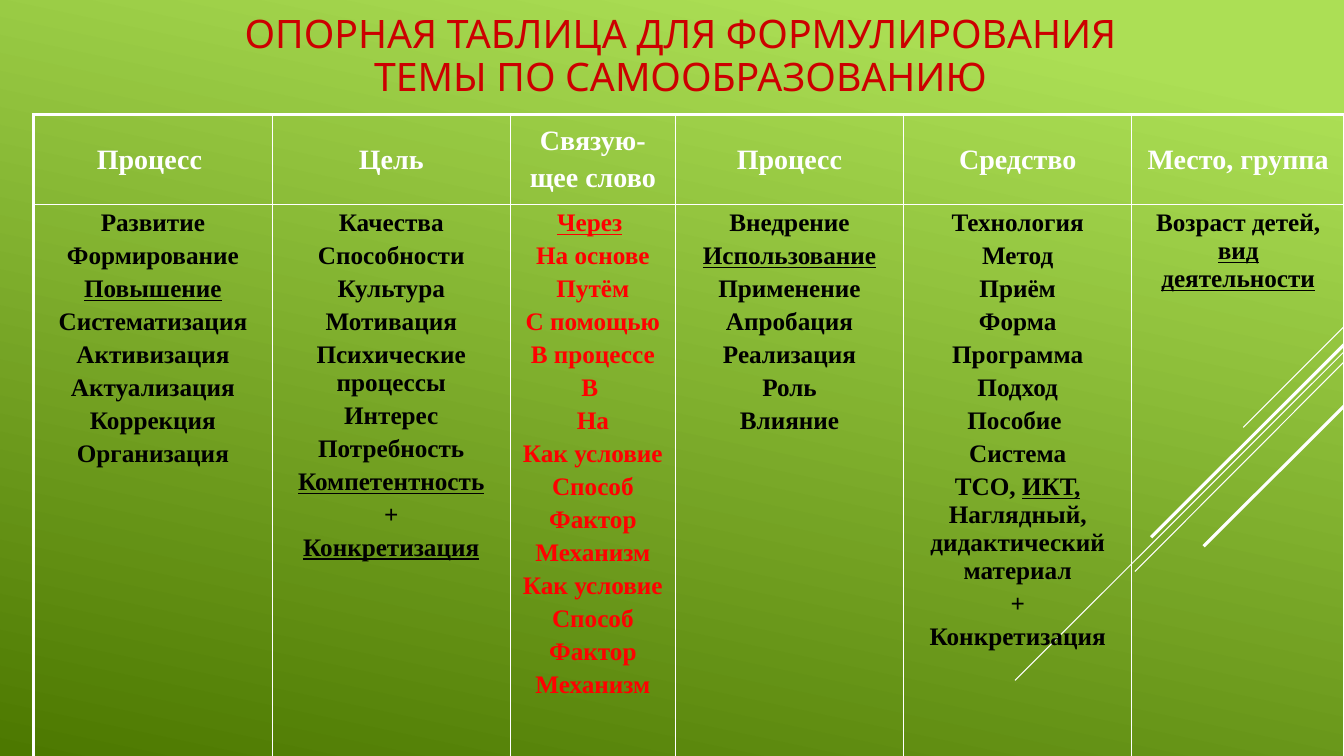
import pptx
import pptx.dml.color
import pptx.enum.dml
import pptx.enum.shapes
import pptx.enum.text
import pptx.oxml
import pptx.oxml.ns
import pptx.util

Pt = pptx.util.Pt
RGBColor = pptx.dml.color.RGBColor
CENTER = pptx.enum.text.PP_ALIGN.CENTER
MIDDLE = pptx.enum.text.MSO_ANCHOR.MIDDLE
TOP = pptx.enum.text.MSO_ANCHOR.TOP

LIGHT_GREEN = RGBColor(0xAC, 0xDF, 0x55)
DARK_GREEN = RGBColor(0x4C, 0x78, 0x00)
WHITE = RGBColor(0xFF, 0xFF, 0xFF)
BLACK = RGBColor(0x00, 0x00, 0x00)
RED = RGBColor(0xFF, 0x00, 0x00)
DARK_RED = RGBColor(0xCC, 0x00, 0x00)

TITLE = "ОПОРНАЯ ТАБЛИЦА ДЛЯ ФОРМУЛИРОВАНИЯ ТЕМЫ ПО САМООБРАЗОВАНИЮ"
TITLE_FORMAT = {"name": "League Spartan", "size": Pt(28)}
HEADER_FORMAT = {"name": "Times New Roman", "size": Pt(20), "bold": True}
BODY_FORMAT = {"name": "Times New Roman", "size": Pt(18), "bold": True}

# Start x, start y, end x, end y, width
DECOR_LINES = [
    (960, 233.3, 888, 305.3, 0.75),
    (960, 251.3, 725, 486, 0.75),
    (960, 258.5, 810.7, 408.2, 0.75),
    (960, 246.2, 822.2, 383.8, 2.25),
    (960, 290.2, 859.7, 390.2, 2.25),
]

ROW_HEIGHTS = [64, 443]
# Width, header, text colour, entries; text between underscores is underlined
COLUMNS = [
    (170.5, ["Процесс "], BLACK, [
        "Развитие", "Формирование", "_Повышение_", "Систематизация",
        "Активизация", "Актуализация", "Коррекция", "Организация"]),
    (170, ["Цель"], BLACK, [
        "Качества", "Способности", "Культура", "Мотивация",
        "Психические процессы", "Интерес", "Потребность",
        "_Компетентность_", "+", "_Конкретизация_"]),
    (118, ["Связую-", "щее слово"], RED, [
        "_Через_ ", "На основе", "Путём", "С помощью", "В процессе", "В ",
        "На"] + ["Как условие", "Способ", "Фактор", "Механизм"] * 2),
    (163, ["Процесс"], BLACK, [
        "Внедрение", "_Использование_", "Применение", "Апробация",
        "Реализация", "Роль", "Влияние"]),
    (163, ["Средство"], BLACK, [
        "Технология", "Метод", "Приём", "Форма", "Программа", "Подход",
        "Пособие ", "Система",
        "ТСО, _ИКТ, _Наглядный, дидактический материал", "+",
        "Конкретизация"]),
    (152, ["Место, группа"], BLACK, ["Возраст детей, _вид деятельности_"]),
]


def paint_background(slide):
    fill = slide.background.fill
    fill.gradient()
    fill.gradient_angle = 258
    stops = [(0.1, LIGHT_GREEN), (1, DARK_GREEN)]
    for stop, (position, color) in zip(fill.gradient_stops, stops):
        stop.position = position
        stop.color.rgb = color


def add_line(slide, start_x, start_y, end_x, end_y, width):
    connector = slide.shapes.add_connector(
        pptx.enum.shapes.MSO_CONNECTOR.STRAIGHT,
        Pt(start_x), Pt(start_y), Pt(end_x), Pt(end_y))
    connector.line.color.rgb = WHITE
    connector.line.width = Pt(width)
    properties = connector._element.spPr
    properties.append(pptx.oxml.parse_xml(
        f"<a:effectLst {pptx.oxml.ns.nsdecls('a')}/>"))


def add_run(paragraph, text, font_format, color):
    run = paragraph.add_run()
    run.text = text
    for name, value in font_format.items():
        setattr(run.font, name, value)
    run.font.color.rgb = color
    return run


def add_title(slide):
    box = slide.shapes.add_textbox(Pt(146), Pt(0), Pt(680), Pt(82))
    frame = box.text_frame
    frame.word_wrap = True
    frame.vertical_anchor = MIDDLE
    paragraph = frame.paragraphs[0]
    paragraph.alignment = CENTER
    paragraph.line_spacing = 0.9
    add_run(paragraph, TITLE, TITLE_FORMAT, DARK_RED)


def set_borders(cell, widths):
    """Draw white cell borders; widths maps the sides L, R, T, B to points."""
    properties = cell._tc.get_or_add_tcPr()
    for side, width in widths.items():
        properties.append(pptx.oxml.parse_xml(
            f'<a:ln{side} {pptx.oxml.ns.nsdecls("a")} w="{Pt(width)}">'
            f'<a:solidFill><a:srgbClr val="{WHITE}"/></a:solidFill>'
            f'</a:ln{side}>'))


def fill_cell(cell, entries, font_format, color, anchor):
    cell.fill.background()
    cell.vertical_anchor = anchor
    frame = cell.text_frame
    for index, entry in enumerate(entries):
        paragraph = frame.add_paragraph() if index else frame.paragraphs[0]
        paragraph.alignment = CENTER
        paragraph.space_before = font_format["size"] // 5
        for part_index, part in enumerate(entry.split("_")):
            if part:
                run = add_run(paragraph, part, font_format, color)
                run.font.underline = part_index % 2 == 1


def add_topic_table(slide):
    total_width = sum(column[0] for column in COLUMNS)
    table = slide.shapes.add_table(
        len(ROW_HEIGHTS), len(COLUMNS), Pt(24), Pt(82),
        Pt(total_width), Pt(sum(ROW_HEIGHTS))).table
    table.first_row = False
    table.horz_banding = False
    for row, height in zip(table.rows, ROW_HEIGHTS):
        row.height = Pt(height)
    last = len(COLUMNS) - 1
    for index, (width, header, color, entries) in enumerate(COLUMNS):
        table.columns[index].width = Pt(width)
        sides = {"L": 2.25 if index == 0 else 1,
                 "R": 2.25 if index == last else 1}
        header_cell, body_cell = table.cell(0, index), table.cell(1, index)
        set_borders(header_cell, {**sides, "T": 2.25, "B": 1})
        set_borders(body_cell, {**sides, "T": 1, "B": 2.25})
        fill_cell(header_cell, header, HEADER_FORMAT, WHITE, MIDDLE)
        fill_cell(body_cell, entries, BODY_FORMAT, color, TOP)


def main():
    presentation = pptx.Presentation()
    presentation.slide_width = Pt(960)
    presentation.slide_height = Pt(540)
    slide = presentation.slides.add_slide(presentation.slide_layouts[6])
    paint_background(slide)
    for line in DECOR_LINES:
        add_line(slide, *line)
    add_title(slide)
    add_topic_table(slide)
    presentation.save("out.pptx")


if __name__ == "__main__":
    main()
